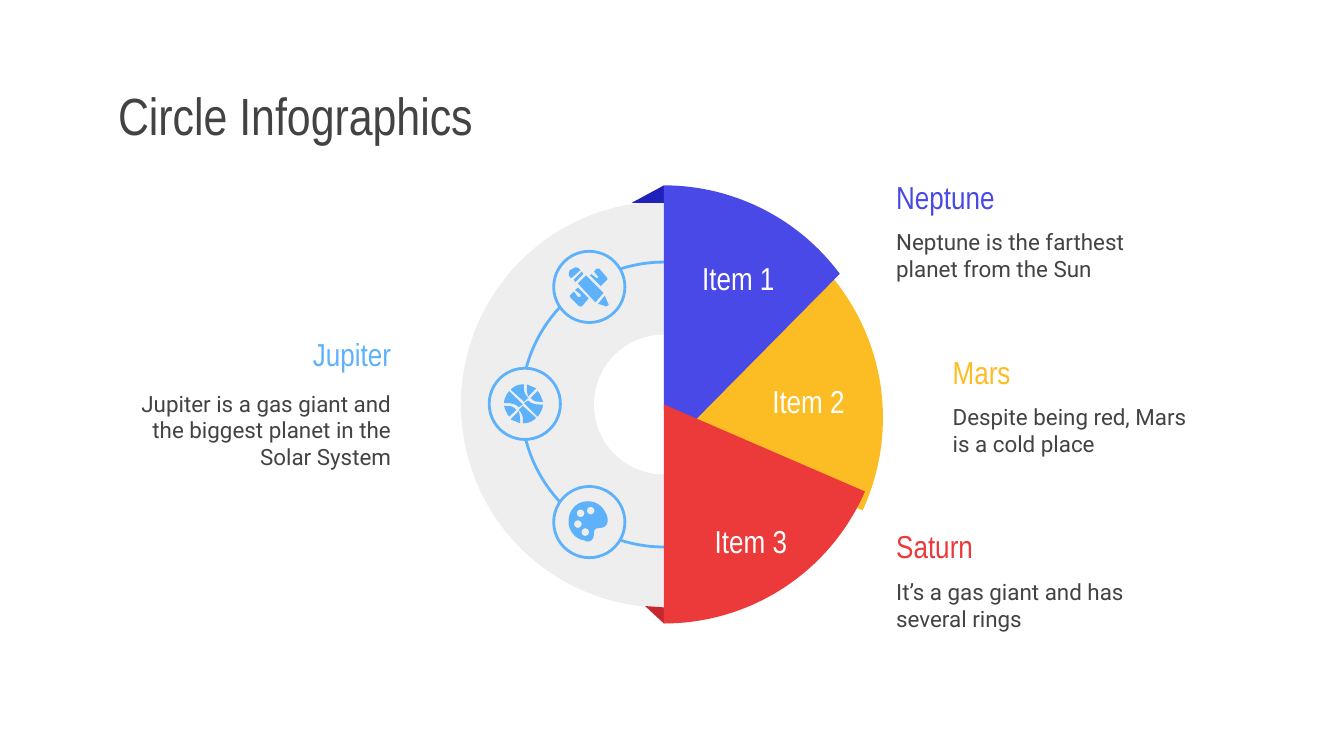
from dataclasses import dataclass
from math import cos, radians, sin

from pptx import Presentation
from pptx.dml.color import RGBColor
from pptx.enum.shapes import MSO_SHAPE
from pptx.enum.text import MSO_ANCHOR, PP_ALIGN
from pptx.util import Inches, Pt


@dataclass(frozen=True)
class Theme:
    heading_font: str = "Arial Narrow"
    body_font: str = "Roboto"
    title_size: int = 28
    heading_size: int = 17
    body_size: int = 12
    stroke: float = 1.5
    text: str = "434343"
    white: str = "FFFFFF"
    ring: str = "EEEEEE"
    jupiter: str = "5EB2FC"
    neptune: str = "4949E7"
    neptune_fold: str = "2020BA"
    mars: str = "FCBD24"
    saturn: str = "EC3A3B"
    saturn_fold: str = "C6282F"


THEME = Theme()
SLIDE_WIDTH = 10
SLIDE_HEIGHT = SLIDE_WIDTH * 9 / 16
TITLE = "Circle Infographics"
PLANETS = [
    ("Jupiter", "Jupiter is a gas giant and the biggest planet in the Solar System",
     THEME.jupiter, 0.95, 2.4, 0.84, PP_ALIGN.RIGHT),
    ("Neptune", "Neptune is the farthest planet from the Sun",
     THEME.neptune, 6.57, 1.23, 0.58, PP_ALIGN.LEFT),
    ("Mars", "Despite being red, Mars is a cold place",
     THEME.mars, 6.99, 2.53, 0.58, PP_ALIGN.LEFT),
    ("Saturn", "It’s a gas giant and has several rings",
     THEME.saturn, 6.57, 3.83, 0.58, PP_ALIGN.LEFT),
]
CENTER = (4.94, 3.01)
DISCS = [(1.51, THEME.ring, None), (1.06, None, THEME.jupiter), (0.52, THEME.white, None)]
WEDGES = [
    ("Item 2", THEME.mars, (4.93, 3.11), 1.64, (-39.8, 24.8),
     [(5.06, 3.21)], (0.5, 0.2, 0.1, 0.1)),
    ("Item 1", THEME.neptune, CENTER, 1.63, (-90, -36.6),
     [(5.15, 3.15), (4.94, 3.05)], (0.1, 0.1, 0.3, 0.5)),
    ("Item 3", THEME.saturn, CENTER, 1.63, (23.4, 90),
     [CENTER], (0.1, 0.5, 0.3, 0.1)),
]
FOLDS = [
    (THEME.neptune_fold, [(4.94, 1.38), (4.7, 1.51), (4.94, 1.51)]),
    (THEME.saturn_fold, [(4.8, 4.51), (4.94, 4.64), (4.94, 4.52)]),
]

BADGE_SIZE = 0.53
ICON_UNIT = 0.01
PENCIL_AND_RULER = [
    [(21, 15), (15, 21), (16, 23), (22, 17)],
    [(33, 13), (32, 13), (30, 15), (33, 19), (33, 20), (32, 20), (28, 17),
     (27, 18), (35, 26), (40, 21), (40, 20), (34, 13)],
    [(24, 18), (18, 24), (31, 38), (37, 31)],
    [(38, 33), (33, 39), (39, 41), (41, 40)],
    [(18, 27), (16, 29), (20, 32), (20, 34), (18, 34), (15, 30), (12, 33),
     (12, 34), (19, 41), (21, 41), (26, 35)],
    [(16, 12), (14, 13), (12, 14), (11, 16, 11, 18, 12, 19), (13, 20), (20, 14),
     (19, 13), (18, 12, 17, 12, 16, 12)],
]
BALL_HALF = [
    [(13, 28), (11, 28), (12, 31, 13, 34, 15, 36), (20, 31), (18, 28, 15, 28, 13, 28)],
    [(15, 17), (13, 19, 11, 23, 11, 26), (13, 26), (15, 26, 19, 26, 22, 29), (25, 27)],
    [(22, 32), (16, 38), (18, 39, 21, 40, 23, 41), (23, 38, 23, 35, 22, 32)],
    [(26, 12), (22, 12, 19, 13, 16, 16), (26, 25), (29, 22), (25, 18, 26, 15, 26, 12)],
]
BALL_TURN = (51, 53)
PALETTE = [(25, 11), (17, 11, 11, 18, 11, 26), (11, 33, 16, 39, 22, 40),
           (23, 40, 24, 41, 25, 41), (29, 41, 30, 38, 30, 34),
           (30, 32, 32, 31, 33, 31), (38, 31, 41, 29, 40, 23), (38, 16, 33, 11, 25, 11)]
PAINT_WELLS = [(27.5, 18), (20, 20), (18, 28), (23.5, 34)]
WELL_RADIUS = 2.8


def arc(center, radius, start, end, steps=60):
    angles = [radians(start + (end - start) * i / steps) for i in range(steps + 1)]
    return [(center[0] + radius * cos(a), center[1] + radius * sin(a)) for a in angles]


def trace(outline, steps=8):
    points = []
    for part in outline:
        if len(part) == 2:
            points.append(part)
            continue
        nodes = [points[-1], part[:2], part[2:4], part[4:]]
        for i in range(1, steps + 1):
            t = i / steps
            weights = ((1 - t) ** 3, 3 * t * (1 - t) ** 2, 3 * t * t * (1 - t), t ** 3)
            points.append(tuple(sum(w * n[axis] for w, n in zip(weights, nodes))
                                for axis in (0, 1)))
    return points


def paint(shape, fill, line=None):
    shape.shadow.inherit = False
    if fill:
        shape.fill.solid()
        shape.fill.fore_color.rgb = RGBColor.from_string(fill)
    else:
        shape.fill.background()
    if line:
        shape.line.color.rgb = RGBColor.from_string(line)
        shape.line.width = Pt(THEME.stroke)
    else:
        shape.line.fill.background()


def add_outline(slide, contours, fill):
    contours = [[(Inches(x), Inches(y)) for x, y in contour] for contour in contours]
    builder = slide.shapes.build_freeform(*contours[0][0], scale=1.0)
    builder.add_line_segments(contours[0][1:], close=True)
    for contour in contours[1:]:
        builder.move_to(*contour[0])
        builder.add_line_segments(contour[1:], close=True)
    shape = builder.convert_to_shape()
    paint(shape, fill)
    return shape


def add_circle(slide, center, radius, fill, line):
    circle = slide.shapes.add_shape(
        MSO_SHAPE.OVAL, Inches(center[0] - radius), Inches(center[1] - radius),
        Inches(2 * radius), Inches(2 * radius))
    paint(circle, fill, line)


def write(shape, words, font, size, color, align, insets=(0.1, 0.1, 0.1, 0.1)):
    frame = shape.text_frame
    frame.word_wrap = True
    frame.vertical_anchor = MSO_ANCHOR.MIDDLE
    frame.margin_left, frame.margin_top, frame.margin_right, frame.margin_bottom = map(
        Inches, insets)
    frame.text = words
    paragraph = frame.paragraphs[0]
    paragraph.alignment = align
    run_font = paragraph.runs[0].font
    run_font.name, run_font.size = font, Pt(size)
    run_font.color.rgb = RGBColor.from_string(color)


def add_text(slide, box, *style):
    write(slide.shapes.add_textbox(*map(Inches, box)), *style)


def add_badge(slide, left, top, icon):
    radius = BADGE_SIZE / 2
    add_circle(slide, (left + radius, top + radius), radius, THEME.ring, THEME.jupiter)
    for contours in icon:
        placed = [[(left + x * ICON_UNIT, top + y * ICON_UNIT) for x, y in contour]
                  for contour in contours]
        add_outline(slide, placed, THEME.jupiter)


def main():
    deck = Presentation()
    deck.slide_width, deck.slide_height = Inches(SLIDE_WIDTH), Inches(SLIDE_HEIGHT)
    slide = deck.slides.add_slide(deck.slide_layouts[6])

    add_text(slide, (0.78, 0.59, 8.45, 0.53), TITLE, THEME.heading_font,
             THEME.title_size, THEME.text, PP_ALIGN.LEFT)

    for radius, fill, line in DISCS:
        add_circle(slide, CENTER, radius, fill, line)

    pencil = [[trace(piece)] for piece in PENCIL_AND_RULER]
    half = [trace(piece) for piece in BALL_HALF]
    turned = [[(BALL_TURN[0] - x, BALL_TURN[1] - y) for x, y in piece] for piece in half]
    ball = [[piece] for piece in half + turned]
    wells = [arc(well, WELL_RADIUS, 0, 360, 24) for well in PAINT_WELLS]
    palette = [[trace(PALETTE)] + wells]
    add_badge(slide, 4.12, 1.87, pencil)
    add_badge(slide, 3.64, 2.74, ball)
    add_badge(slide, 4.12, 3.62, palette)

    for color, corners in FOLDS:
        add_outline(slide, [corners], color)
    for label, color, center, radius, angles, corners, insets in WEDGES:
        wedge = add_outline(slide, [arc(center, radius, *angles) + corners], color)
        write(wedge, label, THEME.heading_font, THEME.heading_size, THEME.white,
              PP_ALIGN.CENTER, insets)

    for name, fact, color, left, top, fact_height, align in PLANETS:
        add_text(slide, (left, top, 2.06, 0.47), name, THEME.heading_font,
                 THEME.heading_size, color, align)
        add_text(slide, (left, top + 0.38, 2.06, fact_height), fact, THEME.body_font,
                 THEME.body_size, THEME.text, align)

    deck.save("out.pptx")


if __name__ == "__main__":
    main()
